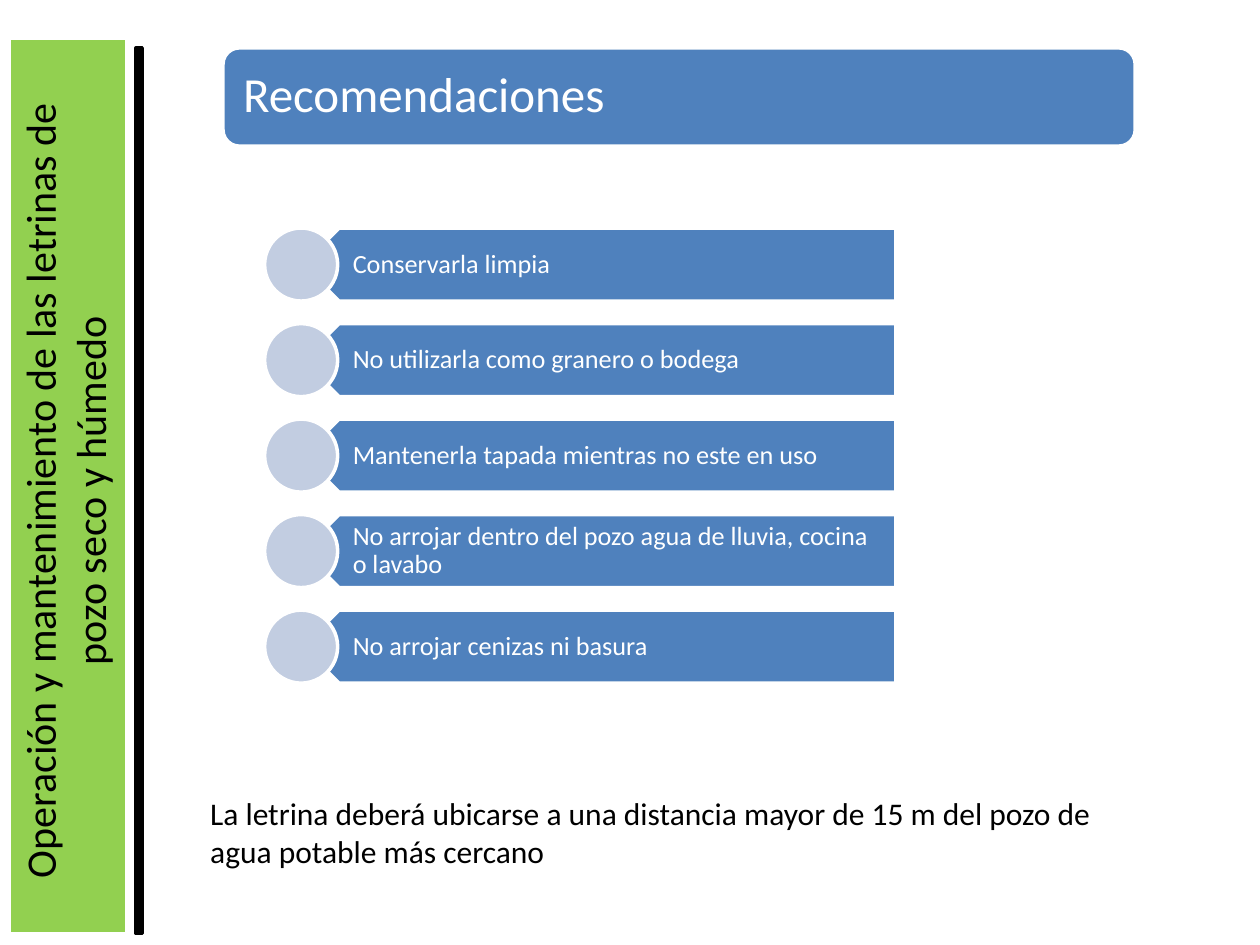
from dataclasses import dataclass

import pptx
import pptx.dml.color
import pptx.enum.shapes
import pptx.enum.text
import pptx.util

Inches = pptx.util.Inches
Shape = pptx.enum.shapes.MSO_SHAPE
Align = pptx.enum.text.PP_ALIGN
Anchor = pptx.enum.text.MSO_ANCHOR

COLORS = {
    "green": "92D050",
    "black": "000000",
    "white": "FFFFFF",
    "blue": "4F81BD",
    "pale": "C2CDE1",
}
RECOMMENDATIONS = [
    "Conservarla limpia",
    "No utilizarla como granero o bodega",
    "Mantenerla tapada mientras no este en uso",
    "No arrojar dentro del pozo agua de lluvia, cocina o lavabo",
    "No arrojar cenizas ni basura",
]
FIRST_ROW = 1.81
ROW_STEP = 0.758
ROW_HEIGHT = 0.58


@dataclass
class Area:
    left: float
    top: float
    width: float
    height: float

    def lengths(self) -> list:
        return [Inches(n) for n in (self.left, self.top, self.width, self.height)]


@dataclass
class TextStyle:
    size: float
    color: str = "black"
    align: Align = Align.LEFT
    anchor: Anchor = Anchor.TOP
    insets: tuple = (0.1, 0.05, 0.1, 0.05)
    line_spacing: float = 1.0


TITLE = TextStyle(28, "white", anchor=Anchor.MIDDLE,
                  insets=(0.12, 0.12, 0.12, 0.12), line_spacing=0.9)
ROW = TextStyle(15, "white", anchor=Anchor.MIDDLE,
                insets=(0.26, 0.06, 0.12, 0.06), line_spacing=0.9)
SIDE = TextStyle(24, align=Align.CENTER)
NOTE = TextStyle(18)


def rgb(name: str) -> pptx.dml.color.RGBColor:
    return pptx.dml.color.RGBColor.from_string(COLORS[name])


def add_block(page, kind: Shape, area: Area, fill: str, line: str = "white"):
    block = page.shapes.add_shape(kind, *area.lengths())
    block.shadow.inherit = False
    block.fill.solid()
    block.fill.fore_color.rgb = rgb(fill)
    block.line.color.rgb = rgb(line)
    block.line.width = pptx.util.Pt(2)
    return block


def write(box, text: str, style: TextStyle) -> None:
    frame = box.text_frame
    frame.word_wrap = True
    frame.auto_size = pptx.enum.text.MSO_AUTO_SIZE.NONE
    frame.vertical_anchor = style.anchor
    (frame.margin_left, frame.margin_top,
     frame.margin_right, frame.margin_bottom) = map(Inches, style.insets)
    para = frame.paragraphs[0]
    para.alignment = style.align
    para.line_spacing = style.line_spacing
    span = para.add_run()
    span.text = text
    span.font.name = "Calibri"
    span.font.size = pptx.util.Pt(style.size)
    span.font.color.rgb = rgb(style.color)


def add_text(page, area: Area, text: str, style: TextStyle):
    box = page.shapes.add_textbox(*area.lengths())
    write(box, text, style)
    return box


def add_sidebar(page) -> None:
    add_block(page, Shape.RECTANGLE, Area(0.07, 0.3, 0.94, 7.11), "green")
    add_block(page, Shape.RECTANGLE, Area(1.08, 0.38, 0.05, 7.03), "black", "black")
    label = add_text(page, Area(-2.52, 3.14, 6.67, 1.51),
                     "Operación y mantenimiento de las letrinas de pozo seco y húmedo", SIDE)
    label.rotation = 270


def add_title(page) -> None:
    banner = add_block(page, Shape.ROUNDED_RECTANGLE, Area(1.77, 0.38, 7.24, 0.78), "blue")
    title = page.shapes.title
    title.left, title.top, title.width, title.height = Area(1.81, 0.42, 7.17, 0.7).lengths()
    write(title, "Recomendaciones", TITLE)
    banner._element.addnext(title._element)


def add_recommendation(page, top: float, text: str) -> None:
    arrow = add_block(page, Shape.PENTAGON, Area(2.4, top, 4.71, ROW_HEIGHT), "blue")
    arrow.rotation = 180
    add_text(page, Area(2.54, top, 4.57, ROW_HEIGHT), text, ROW)
    add_block(page, Shape.OVAL, Area(2.1, top, ROW_HEIGHT, ROW_HEIGHT), "pale")


def main() -> None:
    deck = pptx.Presentation()
    deck.slide_width, deck.slide_height = Inches(10), Inches(7.5)
    page = deck.slides.add_slide(deck.slide_layouts[5])
    add_sidebar(page)
    add_title(page)
    add_text(page, Area(1.57, 6.25, 7.23, 1.01),
             "La letrina deberá ubicarse a una distancia mayor de 15 m "
             "del pozo de agua potable más cercano", NOTE)
    for index, text in enumerate(RECOMMENDATIONS):
        add_recommendation(page, FIRST_ROW + index * ROW_STEP, text)
    deck.save("out.pptx")


if __name__ == "__main__":
    main()
